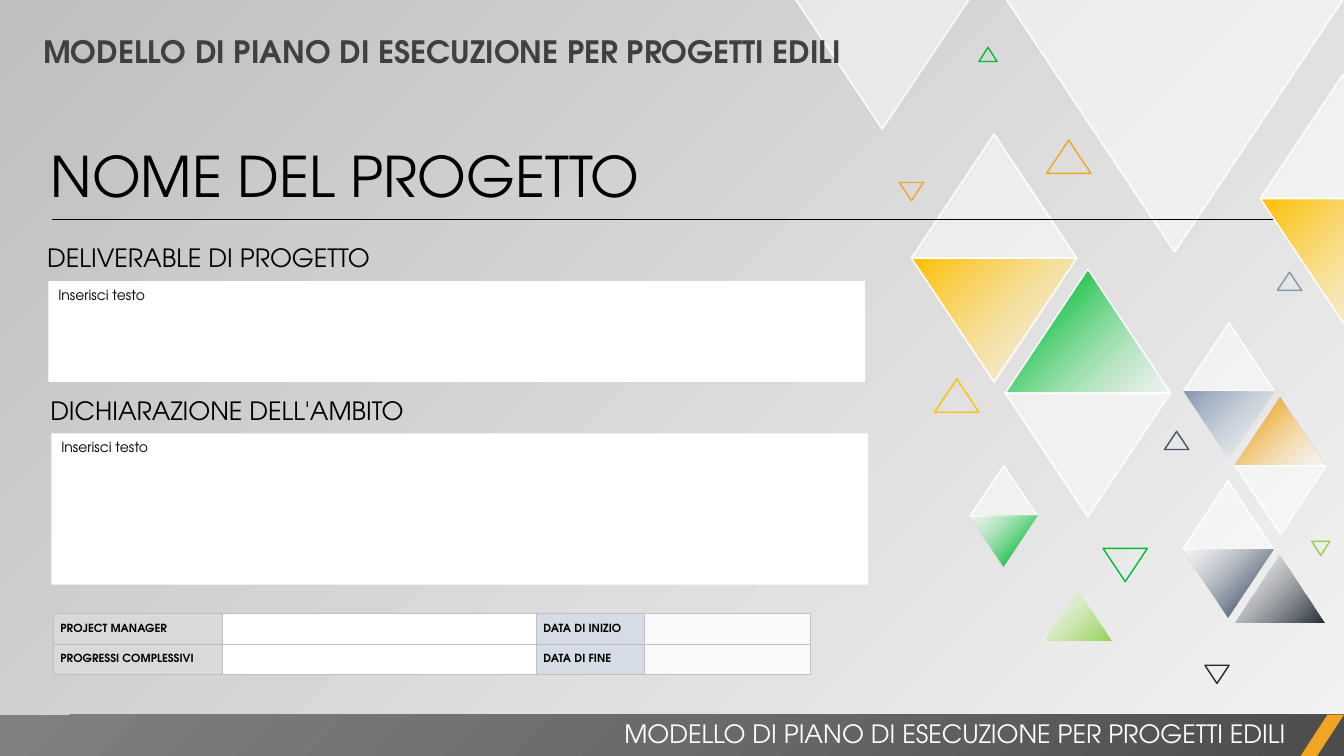
from copy import deepcopy

from pptx import Presentation
from pptx.dml.color import RGBColor
from pptx.enum.shapes import MSO_CONNECTOR as Connector, MSO_SHAPE as Shape
from pptx.enum.text import MSO_ANCHOR as Anchor, MSO_AUTO_SIZE as AutoSize, PP_ALIGN as Align
from pptx.oxml import parse_xml
from pptx.oxml.ns import nsdecls, qn
from pptx.oxml.xmlchemy import OxmlElement
from pptx.util import Pt

PX = 9144
FONT = "TeX Gyre Adventor"
HEADING = "MODELLO DI PIANO DI ESECUZIONE PER PROGETTI EDILI"
colour = RGBColor.from_string


def paint(fill, *stops):
    if len(stops) == 1:
        fill.solid()
        fill.fore_color.rgb = colour(stops[0][1])
    else:
        fill.gradient()
        fill.gradient_angle = 135
        stop_list = next(fill._xPr.iter(qn("a:gsLst")))
        while len(stop_list) < len(stops):
            stop_list.append(deepcopy(stop_list[0]))
        for gradient_stop, (position, shade, _) in zip(fill.gradient_stops, stops):
            gradient_stop.position = position / 100
            gradient_stop.color.rgb = colour(shade)
    for element, (_, _, opacity) in zip(fill._xPr.iter(qn("a:srgbClr")), stops):
        if opacity < 100:
            alpha = OxmlElement("a:alpha")
            alpha.set("val", str(opacity * 1000))
            element.append(alpha)


def write(frame, text, size=10, shade="000000", bold=False, align=Align.LEFT,
          anchor=Anchor.TOP, spacing=None):
    frame.word_wrap = True
    frame.vertical_anchor = anchor
    paragraph = frame.paragraphs[0]
    paragraph.alignment = align
    paragraph.line_spacing = spacing
    run = paragraph.add_run()
    run.text = text
    run.font.name = FONT
    run.font.size = Pt(size)
    run.font.bold = bold
    run.font.color.rgb = colour(shade)


presentation = Presentation()
presentation.slide_width = 1333 * PX
presentation.slide_height = 750 * PX
slide = presentation.slides.add_slide(presentation.slide_layouts[5])
shapes = slide.shapes
paint(slide.background.fill, (0, "F2F2F2", 40), (100, "BFBFBF", 100))

UP, DOWN = 0, 180
WHITE = "FFFFFF"
GLASS = [(0, WHITE, 50)]
diamonds = [
    (904, 133, 164, DOWN, "FFC000", "fade out"),
    (997, 267, 164, UP, "00BD32", "fade in"),
    (1173, 477, 90, DOWN, "44546A", "fade in"),
    (1174, 320, 90, DOWN, "8497B0", "fade out"),
    (1225, 394, 90, UP, "F0A622", "fade in"),
    (962, 462, 67, DOWN, "00BD32", "fade in"),
    (1250, 74, 164, DOWN, "FFC000", "fade out"),
]
single_halves = [
    (1224, 550, 90, UP, "222A35", "fade out"),
    (1035, 585, 67, UP, "92D050", "fade out"),
]
outlines = [
    (1094, 544, 44, DOWN, "00BD32"),
    (927, 376, 44, UP, "FFC000"),
    (1155, 428, 24, UP, "44546A"),
    (1195, 660, 24, DOWN, "222A35"),
    (892, 181, 24, DOWN, "F0A622"),
    (1267, 270, 24, UP, "8497B0"),
    (971, 47, 18, UP, "00BD32"),
    (1301, 537, 18, DOWN, "92D050"),
    (1038, 139, 44, UP, "F0A622"),
]

triangles = [(997, -2, 336, DOWN, GLASS, WHITE), (788, -2, 174, DOWN, GLASS, WHITE)]
for x, y, width, tinted, shade, fade in diamonds + single_halves:
    if fade == "fade out":
        stops = [(0, shade, 100), (100, WHITE, 50)]
    else:
        stops = [(0, WHITE, 50), (82, shade, 100)]
    lower = y + round(width * 0.75)
    edge = WHITE if width == 164 else None
    if (x, y, width, tinted, shade, fade) in single_halves:
        triangles.append((x, y, width, tinted, stops, edge))
    elif tinted == UP:
        triangles.append((x, y, width, UP, stops, edge))
        triangles.append((x, lower, width, DOWN, GLASS, WHITE))
    else:
        triangles.append((x, y, width, UP, GLASS, WHITE))
        triangles.append((x, lower, width, DOWN, stops, edge))
for x, y, width, rotation, shade in outlines:
    triangles.append((x, y, width, rotation, [], shade))

decoration = shapes.add_group_shape()
for x, y, width, rotation, stops, edge in triangles:
    box = (x, y, width, round(width * 0.75))
    triangle = decoration.shapes.add_shape(Shape.ISOSCELES_TRIANGLE, *(n * PX for n in box))
    triangle.rotation = rotation
    triangle.shadow.inherit = False
    if stops:
        paint(triangle.fill, *stops)
    else:
        triangle.fill.background()
    if edge:
        triangle.line.color.rgb = colour(edge)
        triangle.line.width = Pt(1)
    else:
        triangle.line.fill.background()

blocks = [
    (Shape.RECTANGLE, (0, 709, 1333, 41),
     [(0, "4C4C4C", 100), (50, "6B6B6B", 100), (100, "808080", 100)], ""),
    (Shape.PARALLELOGRAM, (1290, 709, 43, 41), [(0, "F0A622", 100)], ""),
    (Shape.RECTANGLE, (48, 279, 810, 100), [(0, WHITE, 100)], "Inserisci testo"),
    (Shape.RECTANGLE, (51, 430, 810, 150), [(0, WHITE, 100)], "Inserisci testo"),
]
for kind, box, stops, text in blocks:
    block = shapes.add_shape(kind, *(n * PX for n in box))
    block.shadow.inherit = False
    block.line.fill.background()
    paint(block.fill, *stops)
    if kind == Shape.PARALLELOGRAM:
        block.adjustments[0] = 0.65
    if len(stops) == 3:
        direction = next(block._element.iter(qn("a:lin")))
        direction.getparent().replace(direction, parse_xml(
            f'<a:path {nsdecls("a")} path="circle"><a:fillToRect l="100000" t="100000"/></a:path>'))
    if text:
        write(block.text_frame, text)

title = shapes.title
title.left, title.top, title.width, title.height = (n * PX for n in (40, 135, 1227, 77))
title.text_frame.auto_size = AutoSize.NONE
write(title.text_frame, "NOME DEL PROGETTO", size=40)

labels = [
    ((33, 28, 861, 47), HEADING, dict(size=22, shade="404040", bold=True)),
    ((525, 708, 760, 40), HEADING, dict(size=18, shade=WHITE, align=Align.RIGHT)),
    ((37, 236, 432, 40), "DELIVERABLE DI PROGETTO", dict(size=18)),
    ((40, 387, 432, 40), "DICHIARAZIONE DELL'AMBITO", dict(size=18)),
]
for box, text, style in labels:
    label = shapes.add_textbox(*(n * PX for n in box))
    write(label.text_frame, text, **style)

rule = shapes.add_connector(Connector.STRAIGHT, *(n * PX for n in (52, 218, 1263, 218)))
rule.line.color.rgb = colour("000000")
rule.line.width = Pt(0.5)
rule._element.spPr.append(OxmlElement("a:effectLst"))

rows = [
    ("PROJECT MANAGER", "", "DATA DI INIZIO", ""),
    ("PROGRESSI COMPLESSIVI", "", "DATA DI FINE", ""),
]
column_fills = ("D9D9D9", WHITE, "D6DCE5", "F7F9FB")
table = shapes.add_table(2, 4, *(n * PX for n in (53, 609, 751, 60))).table
table.first_row = table.horz_banding = False
for column, width in zip(table.columns, (168, 311, 107, 165)):
    column.width = width * PX
for row_index, row in enumerate(rows):
    table.rows[row_index].height = 30 * PX
    for column_index, text in enumerate(row):
        cell = table.cell(row_index, column_index)
        cell.margin_left = cell.margin_right = 7 * PX
        cell.margin_top = cell.margin_bottom = 0
        cell.vertical_anchor = Anchor.MIDDLE
        for side in ("lnL", "lnR", "lnT", "lnB"):
            cell._tc.get_or_add_tcPr().append(parse_xml(
                f'<a:{side} {nsdecls("a")} w="12700"><a:solidFill>'
                f'<a:srgbClr val="BFBFBF"/></a:solidFill></a:{side}>'))
        paint(cell.fill, (0, column_fills[column_index], 100))
        write(cell.text_frame, text, size=8, bold=True, anchor=Anchor.MIDDLE, spacing=1.07)

presentation.save("out.pptx")
